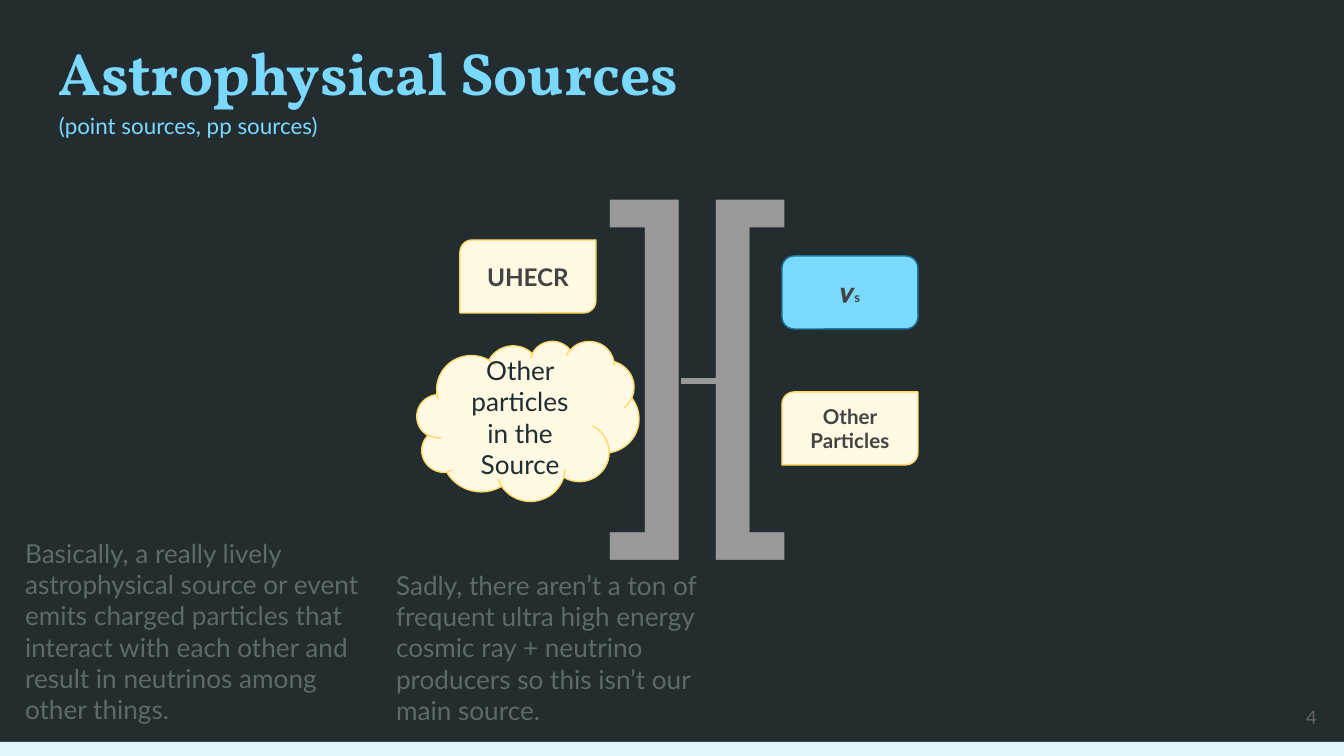
from lxml import etree
from pptx import Presentation
from pptx.dml.color import RGBColor
from pptx.enum.shapes import MSO_CONNECTOR, MSO_SHAPE
from pptx.enum.text import MSO_ANCHOR, MSO_AUTO_SIZE, PP_ALIGN
from pptx.oxml.ns import qn
from pptx.util import Pt

PX = 914400 / 134.4
INSET = 13

LEFT, CENTER, RIGHT = PP_ALIGN.LEFT, PP_ALIGN.CENTER, PP_ALIGN.RIGHT
TOP, MIDDLE = MSO_ANCHOR.TOP, MSO_ANCHOR.MIDDLE
FIXED, GROW = MSO_AUTO_SIZE.NONE, MSO_AUTO_SIZE.SHAPE_TO_FIT_TEXT
RECT, CLOUD = MSO_SHAPE.RECTANGLE, MSO_SHAPE.CLOUD
ROUND, LEAF = MSO_SHAPE.ROUNDED_RECTANGLE, MSO_SHAPE.ROUND_2_DIAG_RECTANGLE
STRAIGHT = MSO_CONNECTOR.STRAIGHT

NIGHT = RGBColor(0x23, 0x2D, 0x30)
ICE = RGBColor(0xE1, 0xF4, 0xFC)
SKY = RGBColor(0x7B, 0xD8, 0xFF)
SEA = RGBColor(0x1A, 0x77, 0x9D)
CREAM = RGBColor(0xFF, 0xF8, 0xE3)
GOLD = RGBColor(0xFF, 0xD9, 0x66)
INK = RGBColor(0x1E, 0x2D, 0x31)
COAL = RGBColor(0x43, 0x43, 0x43)
STEEL = RGBColor(0x99, 0x99, 0x99)
SLATE = RGBColor(0x5E, 0x69, 0x6C)
GRAY = RGBColor(0x66, 0x66, 0x66)

# A run is (text, size, colour, bold, font).
TITLE = [("Astrophysical Sources", 32, SKY, True, "Vollkorn")]
SUB = [("(point sources, pp sources)", 12, SKY, False, "Lato")]

CARD = (136, 73)
# kind, (left, top), (width, height), fill, line, runs
NODES = [
    (CLOUD, (417, 341), (222, 160), CREAM, GOLD,
     [("Other particles in the Source", 14, INK, False, "Lato")]),
    (LEAF, (460, 240), CARD, CREAM, GOLD,
     [("UHECR", 13, COAL, True, "Lato")]),
    (ROUND, (782, 256), CARD, SKY, SEA,
     [("𝝂", 14, COAL, True, "Lato"), ("s", 7, COAL, True, "Lato")]),
    (LEAF, (782, 392), CARD, CREAM, GOLD,
     [("Other Particles", 11, COAL, True, "Lato")]),
]

# left, text
BRACKETS = [(595, "]"), (676, "[")]

# left, top, height, text
NOTES = [
    (383, 556, 185, "Sadly, there aren’t a ton of frequent ultra high energy "
     "cosmic ray + neutrino producers so this isn’t our main source."),
    (12, 524, 218, "Basically, a really lively astrophysical source or event "
     "emits charged particles that interact with each other and result in "
     "neutrinos among other things."),
]


def px(*nums):
    return [round(n * PX) for n in nums]


def write(shape, paras, align=LEFT, anchor=TOP, fit=FIXED):
    frame = shape.text_frame
    frame.word_wrap = True
    frame.auto_size = fit
    frame.vertical_anchor = anchor
    inset, = px(INSET)
    frame.margin_left = frame.margin_right = inset
    frame.margin_top = frame.margin_bottom = inset
    for i, runs in enumerate(paras):
        para = frame.add_paragraph() if i else frame.paragraphs[0]
        para.alignment = align
        for text, size, color, bold, face in runs:
            run = para.add_run()
            run.text = text
            font = run.font
            font.size, font.bold, font.name = Pt(size), bold, face
            font.color.rgb = color


def add_node(slide, kind, box, fill, line=None):
    node = slide.shapes.add_shape(kind, *px(*box))
    node.shadow.inherit = False
    node.fill.solid()
    node.fill.fore_color.rgb = fill
    if line is None:
        node.line.fill.background()
    else:
        node.line.color.rgb = line
        node.line.width = Pt(0.75)
    return node


def add_text(slide, box, run, **style):
    write(slide.shapes.add_textbox(*px(*box)), [[run]], **style)


def add_link(slide, ends):
    link = slide.shapes.add_connector(STRAIGHT, *px(*ends))
    link.line.color.rgb = STEEL
    link.line.width = Pt(3)
    etree.SubElement(link.element.spPr, qn("a:effectLst"))


def main():
    deck = Presentation()
    deck.slide_width, deck.slide_height = px(1344, 756)
    slide = deck.slides.add_slide(deck.slide_layouts[5])
    back = slide.background.fill
    back.solid()
    back.fore_color.rgb = NIGHT

    add_node(slide, RECT, (0, 742, 1344, 14), ICE)

    title = slide.shapes.title
    title.left, title.top, title.width, title.height = px(46, 23, 1253, 153)
    write(title, [TITLE, SUB])
    title.text_frame.paragraphs[1].line_spacing = 1.15

    add_text(slide, (1249, 688, 81, 58), ("4", 10, GRAY, False, "Lato"),
             align=RIGHT, anchor=MIDDLE)

    for kind, spot, size, fill, line, runs in NODES:
        node = add_node(slide, kind, spot + size, fill, line)
        write(node, [runs], CENTER, MIDDLE)

    for left, mark in BRACKETS:
        add_text(slide, (left, 117, 101, 480),
                 (mark, 200, STEEL, False, "Roboto"), fit=GROW)
    add_link(slide, (681, 381, 730, 381))

    for left, top, height, text in NOTES:
        add_text(slide, (left, top, 371, height),
                 (text, 14, SLATE, False, "Lato"), fit=GROW)

    deck.save("out.pptx")


if __name__ == "__main__":
    main()
